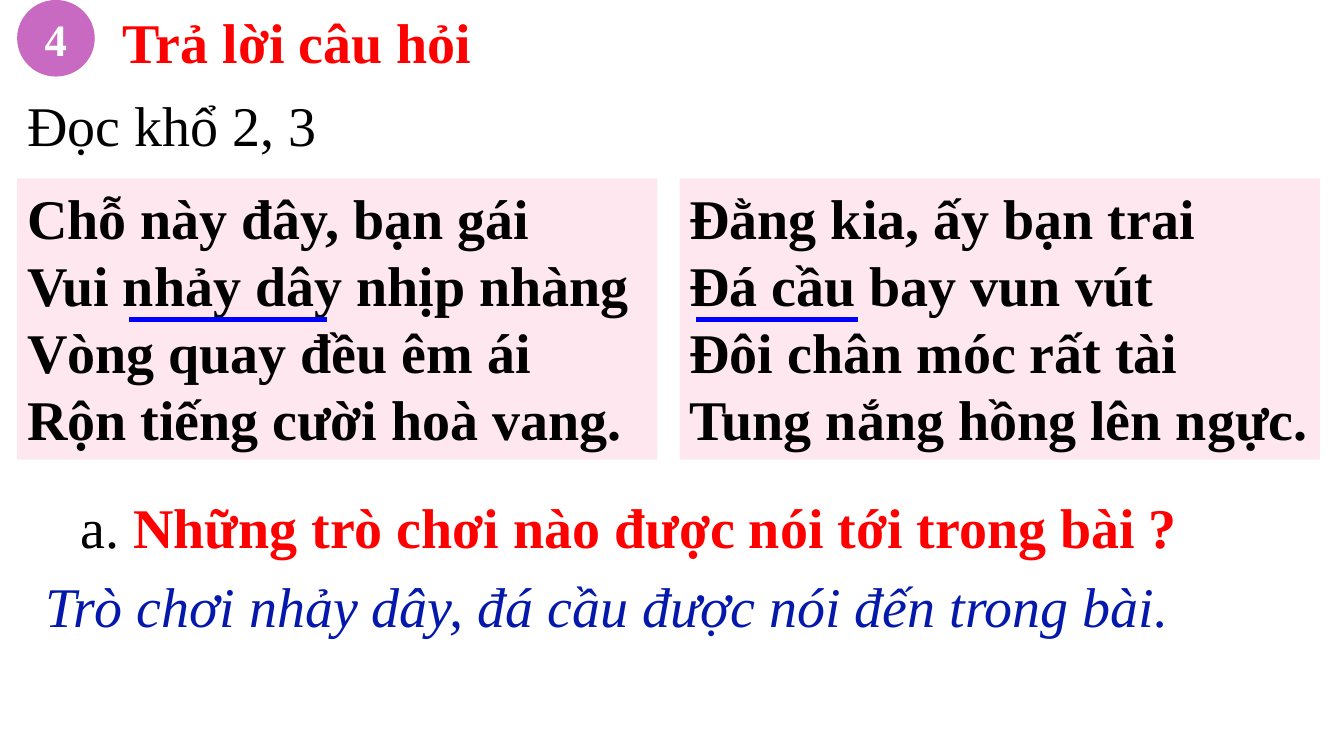
from pptx import Presentation
from pptx.dml.color import RGBColor
from pptx.enum.shapes import MSO_CONNECTOR, MSO_SHAPE
from pptx.enum.text import MSO_ANCHOR, MSO_AUTO_SIZE, PP_ALIGN
from pptx.oxml.ns import qn
from pptx.util import Inches, Pt
from lxml.etree import SubElement

FONT = "Times New Roman"
COLORS = {
    "black": "000000",
    "white": "FFFFFF",
    "red": "FF0000",
    "navy": "0418AC",
    "blue": "0000FF",
    "pink": "FEE7EF",
    "purple": "C86AC1",
}
POEMS = [
    ["Chỗ này đây, bạn gái", "Vui nhảy dây nhịp nhàng",
     "Vòng quay đều êm ái", "Rộn tiếng cười hoà vang."],
    ["Đằng kia, ấy bạn trai", "Đá cầu bay vun vút",
     "Đôi chân móc rất tài", "Tung nắng hồng lên ngực."],
]
MARKS = [(1.11, 1.96), (0.16, 1.61)]


def color(name):
    return RGBColor.from_string(COLORS[name])


def write(para, text, size=40, ink="black", bold=False, italic=False):
    run = para.add_run()
    run.text = text
    font = run.font
    font.name, font.size = FONT, Pt(size)
    font.bold, font.italic = bold, italic
    font.color.rgb = color(ink)


def add_box(slide, box, fill=None, kind=MSO_SHAPE.RECTANGLE, wrap=True):
    place = [Inches(v) for v in box]
    if fill:
        shape = slide.shapes.add_shape(kind, *place)
        shape.shadow.inherit = False
        shape.fill.solid()
        shape.fill.fore_color.rgb = color(fill)
        shape.line.fill.background()
    else:
        shape = slide.shapes.add_textbox(*place)
    frame = shape.text_frame
    frame.word_wrap = wrap
    frame.auto_size = MSO_AUTO_SIZE.SHAPE_TO_FIT_TEXT
    frame.vertical_anchor = MSO_ANCHOR.TOP
    frame.paragraphs[0].alignment = PP_ALIGN.LEFT
    return frame


def add_header(slide, left, top):
    title = add_box(slide, (left + 0.95, top + 0.03, 3.87, 0.77), "white")
    write(title.paragraphs[0], "Trả lời câu hỏi", ink="red", bold=True)
    badge = add_box(slide, (left, top, 0.77, 0.76), "purple", MSO_SHAPE.OVAL)
    badge.auto_size = MSO_AUTO_SIZE.NONE
    badge.vertical_anchor = MSO_ANCHOR.MIDDLE
    badge.paragraphs[0].alignment = PP_ALIGN.CENTER
    write(badge.paragraphs[0], "4", size=32, ink="white", bold=True)
    task = add_box(slide, (left, top + 0.85, 3.1, 0.77), wrap=False)
    write(task.paragraphs[0], "Đọc khổ 2, 3")


def add_poem(slide, left, top, lines, mark):
    frame = add_box(slide, (left, top, 6.35, 2.79), "pink")
    for row, text in enumerate(lines):
        para = frame.add_paragraph() if row else frame.paragraphs[0]
        para.alignment = PP_ALIGN.LEFT
        write(para, text, bold=True)
    start, width = mark
    y = Inches(top + 1.4)
    line = slide.shapes.add_connector(
        MSO_CONNECTOR.STRAIGHT,
        Inches(left + start), y, Inches(left + start + width), y)
    line.line.color.rgb = color("blue")
    line.line.width = Pt(3)
    SubElement(line.element.spPr, qn("a:effectLst"))


def add_answer(slide, left, top):
    ask = add_box(slide, (left + 0.35, top, 11.3, 0.77)).paragraphs[0]
    write(ask, "a. ")
    write(ask, "Những trò chơi nào được nói tới trong bài ?", ink="red", bold=True)
    reply = add_box(slide, (left, top + 0.78, 11.53, 0.77)).paragraphs[0]
    write(reply, "Trò chơi nhảy dây, đá cầu được nói đến trong bài.",
          ink="navy", italic=True)


def main():
    deck = Presentation()
    deck.slide_width, deck.slide_height = Inches(13.33), Inches(7.5)
    slide = deck.slides.add_slide(deck.slide_layouts[6])
    add_header(slide, 0.17, 0)
    for col, (lines, mark) in enumerate(zip(POEMS, MARKS)):
        add_poem(slide, 0.17 + col * 6.57, 1.77, lines, mark)
    add_answer(slide, 0.35, 4.84)
    deck.save("out.pptx")


if __name__ == "__main__":
    main()
